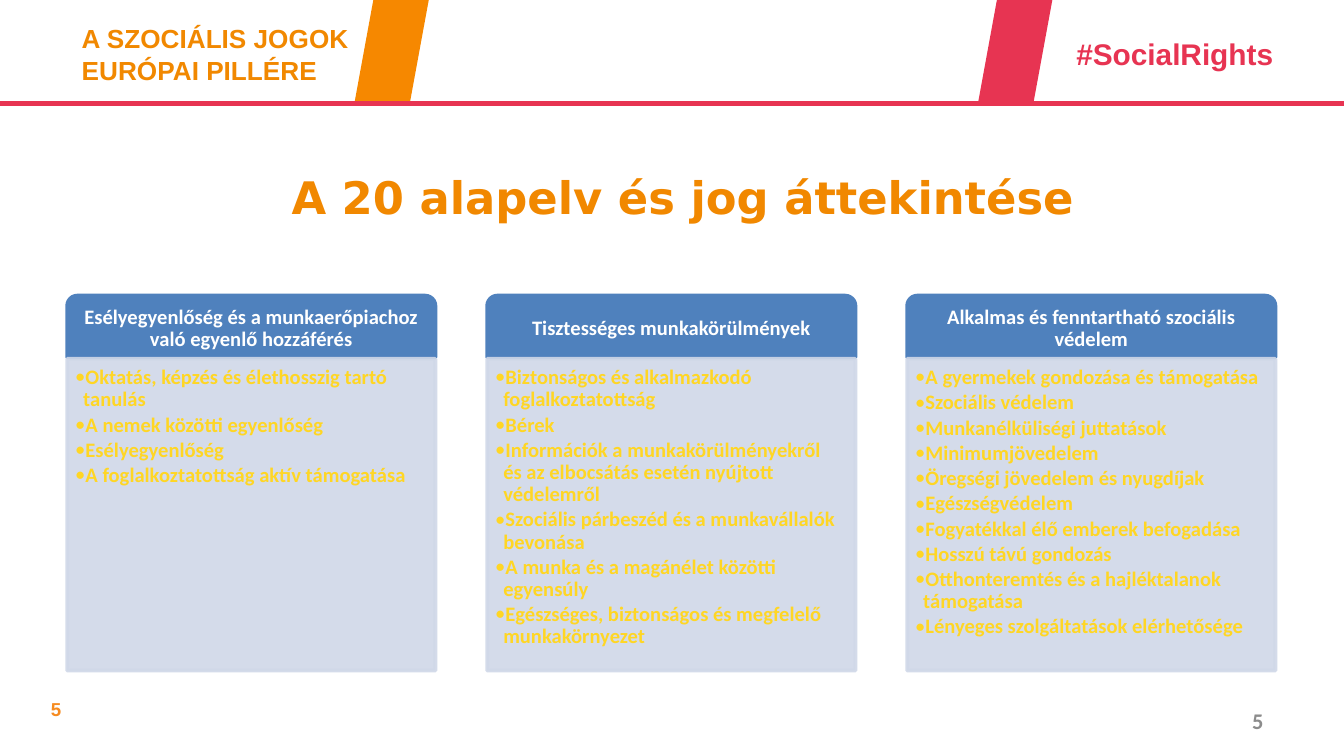
from dataclasses import dataclass

from lxml.etree import SubElement
from pptx import Presentation
from pptx.dml.color import RGBColor
from pptx.enum.shapes import MSO_CONNECTOR, MSO_SHAPE
from pptx.enum.text import MSO_ANCHOR, PP_ALIGN
from pptx.oxml.ns import qn
from pptx.util import Inches, Pt


@dataclass(frozen=True)
class Theme:
    orange: str = "F18800"
    band_orange: str = "F68800"
    number_orange: str = "F68B20"
    red: str = "E73452"
    blue: str = "4F81BD"
    pale_blue: str = "D0D8E8"
    yellow: str = "FFD624"
    white: str = "FFFFFF"
    gray: str = "8C8C8C"
    title_size: int = 24
    hashtag_size: int = 16
    banner_size: int = 14
    number_size: int = 12
    card_size: int = 11
    small_size: int = 10


theme = Theme()


def write(shape, lines, size, color, font="Arial",
          align=PP_ALIGN.LEFT, anchor=MSO_ANCHOR.TOP):
    """Put one paragraph per line into the shape and format its runs."""
    frame = shape.text_frame
    frame.word_wrap = True
    frame.vertical_anchor = anchor
    frame.text = "\n".join(lines)
    for paragraph in frame.paragraphs:
        paragraph.alignment = align
        for run in paragraph.runs:
            run.font.name = font
            run.font.size = Pt(size)
            run.font.bold = True
            run.font.color.rgb = RGBColor.from_string(color)


def add_block(kind, left, top, width, height, color, outlined=False, alpha=None):
    """Add a filled shape, with alpha as an opacity percentage."""
    block = slide.shapes.add_shape(
        kind, Inches(left), Inches(top), Inches(width), Inches(height))
    block.shadow.inherit = False
    block.fill.solid()
    block.fill.fore_color.rgb = RGBColor.from_string(color)
    if outlined:
        block.line.color.rgb = RGBColor.from_string(color)
        block.line.width = Pt(2)
    else:
        block.line.fill.background()
    if alpha:
        for color_element in block._element.spPr.iter(qn("a:srgbClr")):
            SubElement(color_element, qn("a:alpha"), val=str(alpha * 1000))
    return block


presentation = Presentation()
presentation.slide_width = Inches(10)
presentation.slide_height = Inches(10 * 9 / 16)
slide = presentation.slides.add_slide(presentation.slide_layouts[6])

# Banner
header_line = slide.shapes.add_connector(
    MSO_CONNECTOR.STRAIGHT, 0, Inches(0.77), Inches(10), Inches(0.77))
header_line.line.color.rgb = RGBColor.from_string(theme.red)
header_line.line.width = Pt(2.25)
SubElement(header_line._element.spPr, qn("a:effectLst"))

for left, color in ((2.64, theme.band_orange), (7.28, theme.red)):
    add_block(MSO_SHAPE.PARALLELOGRAM, left, 0, 0.55, 0.75, color)

# Banner texts, title and page numbers
labels = [
    ((0.28, 5.14, 2.18, 0.27), "5",
     dict(size=theme.small_size, color=theme.number_orange)),
    ((0.51, 0.12, 2.54, 0.57), "A SZOCIÁLIS JOGOK EURÓPAI PILLÉRE",
     dict(size=theme.banner_size, color=theme.orange)),
    ((7.91, 0.22, 2.09, 0.37), "#SocialRights",
     dict(size=theme.hashtag_size, color=theme.red)),
    ((0.16, 1.08, 9.84, 0.77), "A 20 alapelv és jog áttekintése",
     dict(size=theme.title_size, color=theme.orange, font="DejaVu Sans",
          align=PP_ALIGN.CENTER, anchor=MSO_ANCHOR.MIDDLE)),
    ((7.17, 5.21, 2.33, 0.3), "5",
     dict(size=theme.number_size, color=theme.gray, font="Calibri",
          align=PP_ALIGN.RIGHT, anchor=MSO_ANCHOR.MIDDLE)),
]
for place, text, style in labels:
    box = slide.shapes.add_textbox(*map(Inches, place))
    write(box, [text], **style)

# Three cards of principles
cards = [
    ("Esélyegyenlőség és a munkaerőpiachoz való egyenlő hozzáférés", [
        "Oktatás, képzés és élethosszig tartó tanulás",
        "A nemek közötti egyenlőség",
        "Esélyegyenlőség",
        "A foglalkoztatottság aktív támogatása",
    ]),
    ("Tisztességes munkakörülmények", [
        "Biztonságos és alkalmazkodó foglalkoztatottság",
        "Bérek",
        "Információk a munkakörülményekről és az elbocsátás esetén "
        "nyújtott védelemről",
        "Szociális párbeszéd és a munkavállalók bevonása",
        "A munka és a magánélet közötti egyensúly",
        "Egészséges, biztonságos és megfelelő munkakörnyezet",
    ]),
    ("Alkalmas és fenntartható szociális védelem", [
        "A gyermekek gondozása és támogatása",
        "Szociális védelem",
        "Munkanélküliségi juttatások",
        "Minimumjövedelem",
        "Öregségi jövedelem és nyugdíjak",
        "Egészségvédelem",
        "Fogyatékkal élő emberek befogadása",
        "Hosszú távú gondozás",
        "Otthonteremtés és a hajléktalanok támogatása",
        "Lényeges szolgáltatások elérhetősége",
    ]),
]
first_left, last_left, card_width = 0.5, 6.75, 2.74
card_step = (last_left - first_left) / (len(cards) - 1)
for index, (heading, principles) in enumerate(cards):
    left = first_left + index * card_step

    header = add_block(MSO_SHAPE.ROUND_2_SAME_RECTANGLE, left, 2.2,
                       card_width, 0.46, theme.blue, outlined=True)
    write(header, [heading], theme.card_size, theme.white, "Calibri",
          align=PP_ALIGN.CENTER, anchor=MSO_ANCHOR.MIDDLE)
    header.text_frame.margin_top = Inches(0.06)
    header.text_frame.paragraphs[0].line_spacing = 0.9

    body = add_block(MSO_SHAPE.RECTANGLE, left, 2.67,
                     card_width, 2.32, theme.pale_blue, outlined=True, alpha=90)
    write(body, principles, theme.card_size, theme.yellow, "Calibri")
    frame = body.text_frame
    frame.margin_left = frame.margin_top = Inches(0.06)
    frame.margin_right = Inches(0.09)
    frame.margin_bottom = Inches(0.1)
    for paragraph in frame.paragraphs:
        paragraph.line_spacing = 0.9
        paragraph.space_after = Pt(0.15 * theme.card_size)
        properties = paragraph._p.get_or_add_pPr()
        properties.set("marL", str(Inches(0.06)))
        properties.set("indent", str(-Inches(0.06)))
        SubElement(properties, qn("a:buFont"), typeface="Calibri")
        SubElement(properties, qn("a:buChar"), char="•")

presentation.save("out.pptx")
